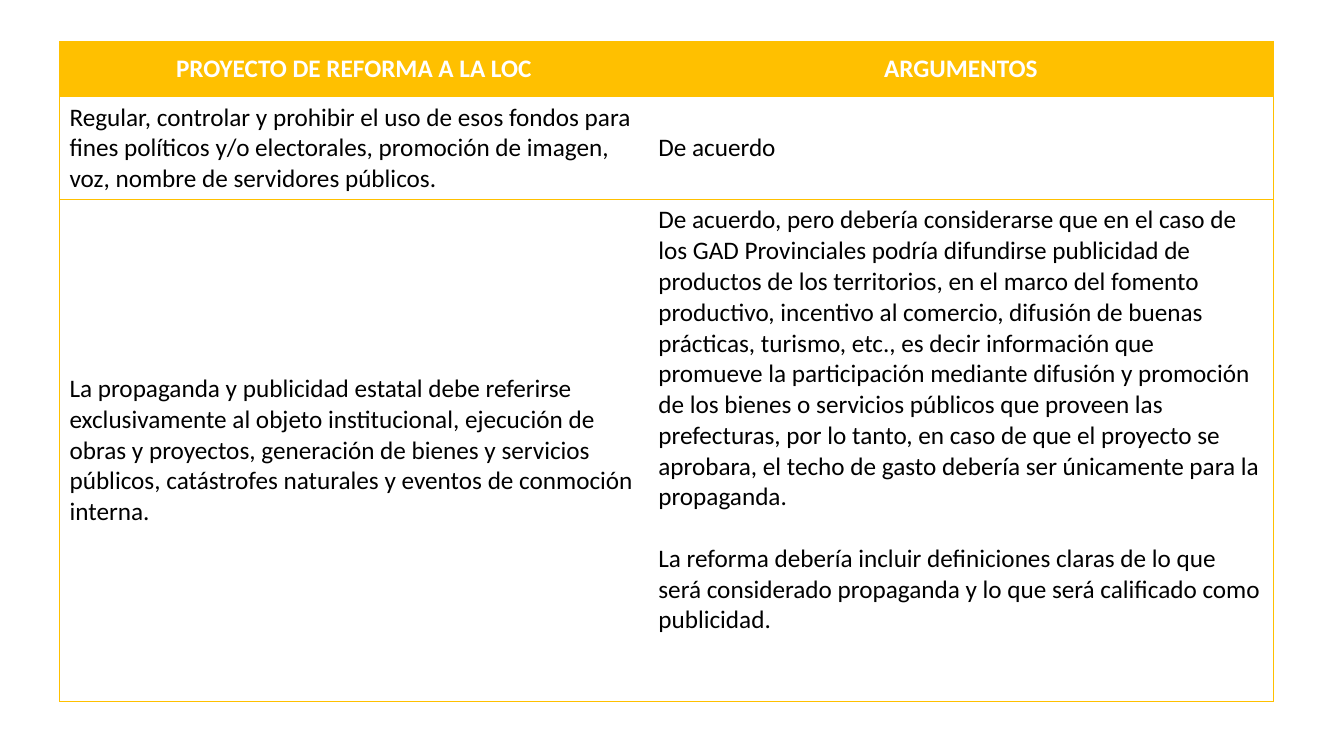
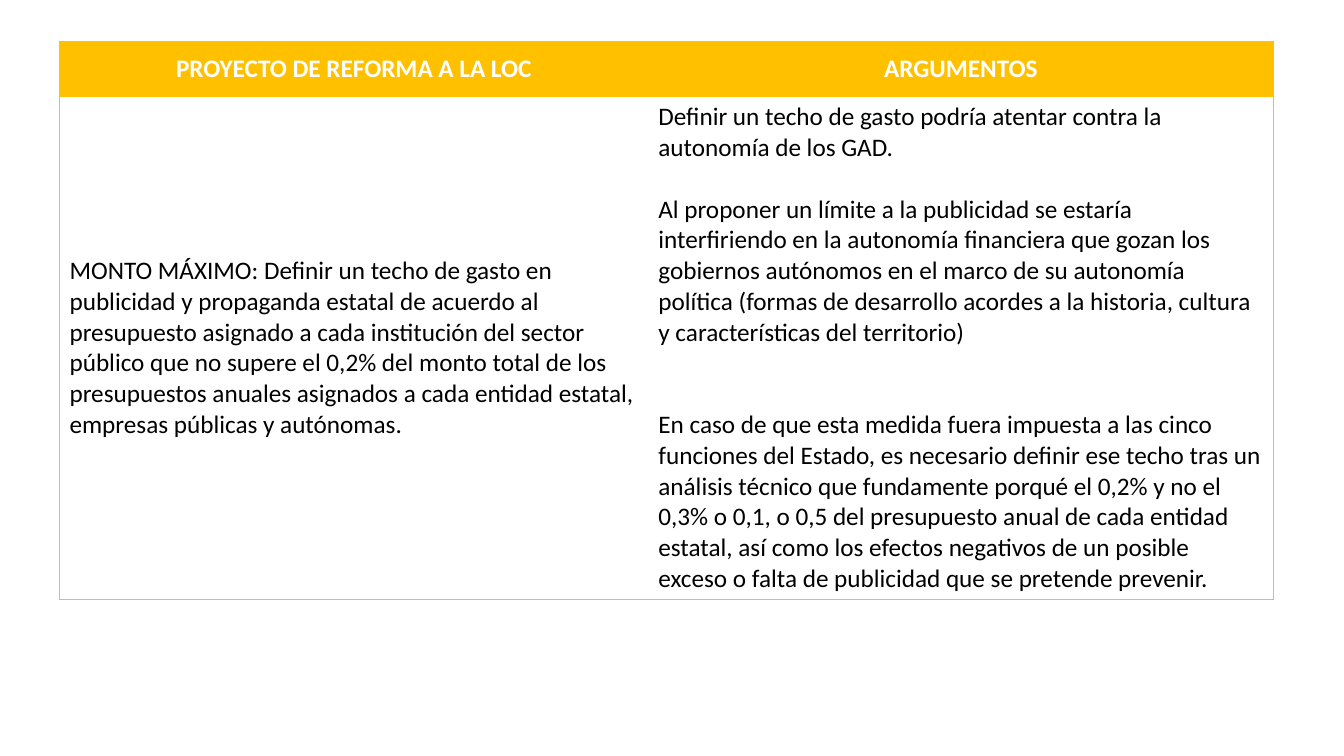
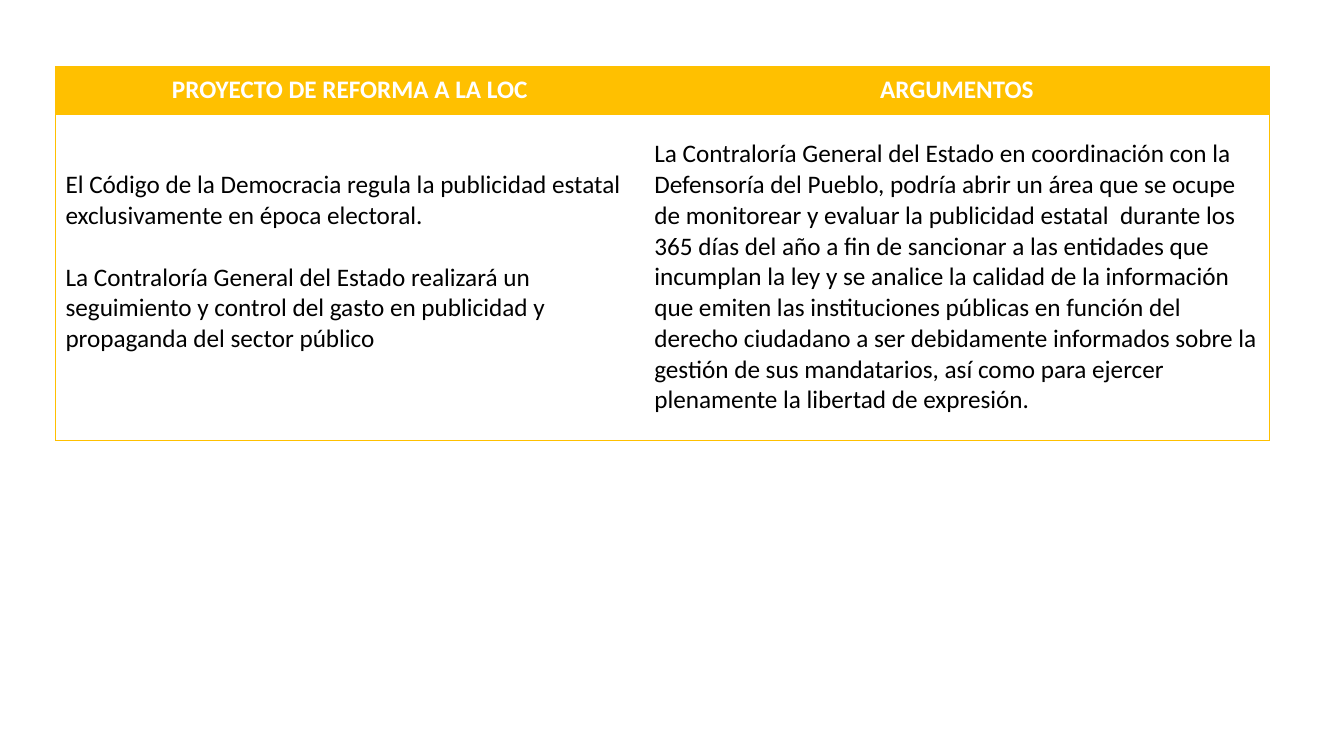
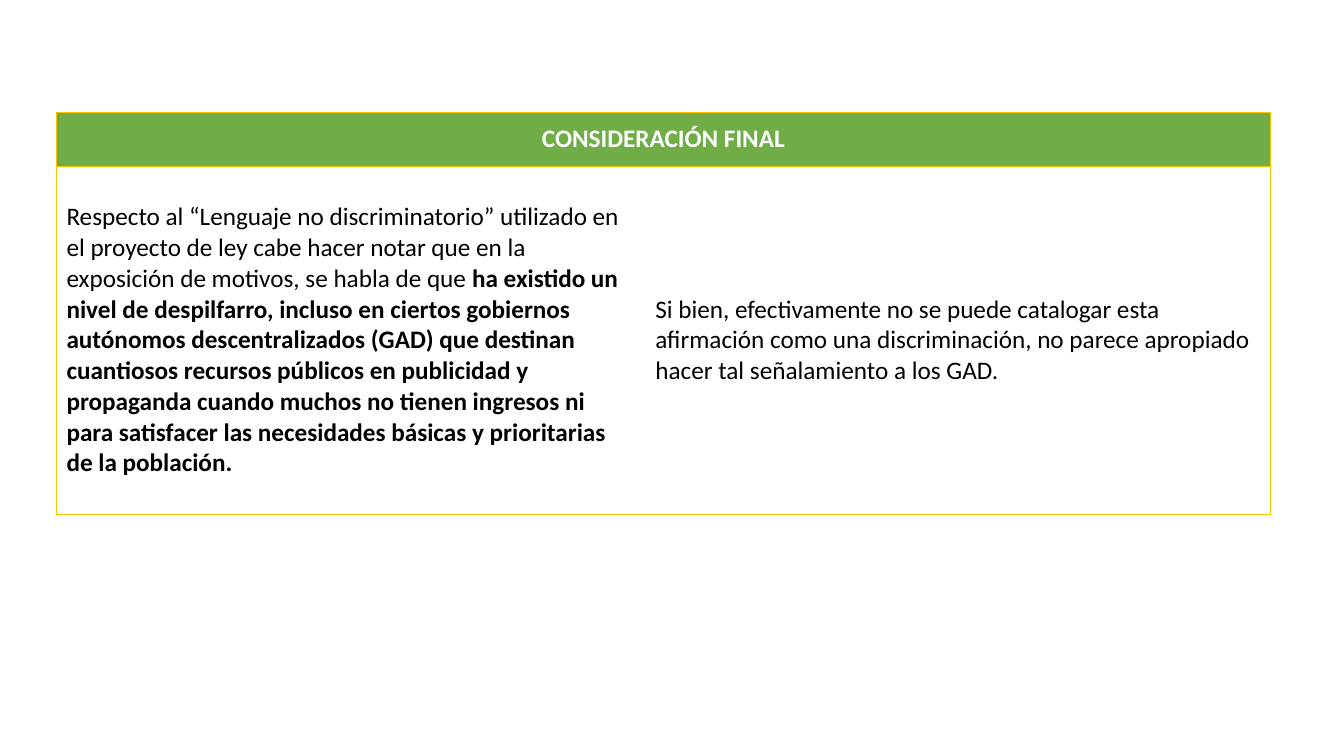
from dataclasses import dataclass

from lxml import etree
from pptx import Presentation
from pptx.dml.color import RGBColor
from pptx.enum.text import MSO_ANCHOR, PP_ALIGN
from pptx.oxml.ns import qn
from pptx.util import Inches, Pt

GOLD = RGBColor(0xFF, 0xC0, 0x00)
GREEN = RGBColor(0x70, 0xAD, 0x47)
WHITE = RGBColor(0xFF, 0xFF, 0xFF)
BLACK = RGBColor(0x00, 0x00, 0x00)
MIDDLE = MSO_ANCHOR.MIDDLE
LEFT, CENTER = PP_ALIGN.LEFT, PP_ALIGN.CENTER

FONT = "Calibri"
SIZE = Pt(18)
LINE = 22
BORDER = Pt(0.5)
COLS = (5.84, 6.2)
MARGIN = 0.05
NO_STYLE = "{2D5ABB26-0587-4C30-8999-92F81FD0307C}"
HEADERS = ("PROYECTO DE REFORMA A LA LOC", "ARGUMENTOS")


@dataclass
class Para:
    """Paragraph with an optional bold ending and a gap above, in lines."""
    text: str
    bold: str = ""
    gap: int = 0


@dataclass
class Body:
    """Body cell: its paragraphs and its bottom margin in inches."""
    paras: list
    bottom: float = MARGIN


def set_borders(cell, sides):
    """Draw gold lines on the given sides of a cell."""
    tc_pr = cell._tc.get_or_add_tcPr()
    for i, side in enumerate(sides):
        ln = etree.Element(qn(f"a:ln{side}"), w=str(BORDER))
        fill = etree.SubElement(ln, qn("a:solidFill"))
        etree.SubElement(fill, qn("a:srgbClr"), val=str(GOLD))
        tc_pr.insert(i, ln)


def write_cell(cell, body, color=BLACK, bold=False, align=LEFT):
    """Write the paragraphs of a cell, centred vertically."""
    cell.vertical_anchor = MIDDLE
    cell.margin_bottom = Inches(body.bottom)
    tf = cell.text_frame
    for i, para in enumerate(body.paras):
        p = tf.add_paragraph() if i else tf.paragraphs[0]
        p.alignment = align
        p.space_before = Pt(LINE * para.gap)
        p.font.name, p.font.size = FONT, SIZE
        p.font.color.rgb = color
        p.font.bold = bold
        p.add_run().text = para.text
        if para.bold:
            r = p.add_run()
            r.text = para.bold
            r.font.bold = True


def add_comparison(prs, left, top, heights, rows, headers=HEADERS, fill=GOLD):
    """Add a slide with a two-column table under a coloured header."""
    slide = prs.slides.add_slide(prs.slide_layouts[6])
    frame = slide.shapes.add_table(
        len(heights), len(COLS), Inches(left), Inches(top),
        Inches(sum(COLS)), Inches(sum(heights)))
    table = frame.table
    table.horz_banding = False
    table._tbl.tblPr.find(qn("a:tableStyleId")).text = NO_STYLE
    for col, width in zip(table.columns, COLS):
        col.width = Inches(width)
    for row, height in zip(table.rows, heights):
        row.height = Inches(height)
    if len(headers) == 1:
        table.cell(0, 0).merge(table.cell(0, 1))
    for i, text in enumerate(headers):
        write_cell(table.cell(0, i), Body([Para(text)]), WHITE, True, CENTER)
    for i, row in enumerate(rows, 1):
        for j, body in enumerate(row):
            write_cell(table.cell(i, j), body)
    for i in range(len(heights)):
        for j, side in enumerate("LR"):
            cell = table.cell(i, j)
            if i:
                cell.fill.background()
            else:
                cell.fill.solid()
                cell.fill.fore_color.rgb = fill
            merged = cell.is_merge_origin
            set_borders(cell, "LRTB" if merged else side + "TB")


def main():
    """Build the four slides."""
    prs = Presentation()
    prs.slide_width, prs.slide_height = Inches(13.33), Inches(7.5)

    add_comparison(prs, 0.59, 0.41, (0.55, 1.02, 4.98), [
        (Body([Para("Regular, controlar y prohibir el uso de esos fondos para fines "
                    "políticos y/o electorales, promoción de imagen, voz, nombre de "
                    "servidores públicos.")]),
         Body([Para("De acuerdo")])),
        (Body([Para("La propaganda y publicidad estatal debe referirse exclusivamente al "
                    "objeto institucional, ejecución de obras y proyectos, generación de "
                    "bienes y servicios públicos, catástrofes naturales y eventos de "
                    "conmoción interna.")]),
         Body([Para("De acuerdo, pero debería considerarse que en el caso de los GAD "
                    "Provinciales podría difundirse publicidad de productos de los "
                    "territorios, en el marco del fomento productivo, incentivo al "
                    "comercio, difusión de buenas prácticas, turismo, etc., es decir "
                    "información que  promueve la participación mediante difusión y "
                    "promoción de los bienes o servicios públicos que proveen las "
                    "prefecturas, por lo tanto, en caso de que el proyecto se aprobara, "
                    "el techo de gasto debería ser únicamente para la propaganda."),
               Para("La reforma debería incluir definiciones claras de lo que será "
                    "considerado propaganda y lo que será calificado como publicidad.",
                    gap=1)], bottom=0.65)),
    ])

    add_comparison(prs, 0.59, 0.41, (0.55, 4.98), [
        (Body([Para("MONTO MÁXIMO: Definir un techo de gasto en publicidad y propaganda "
                    "estatal de acuerdo al presupuesto asignado a cada institución del "
                    "sector público que no supere el 0,2% del monto total de los "
                    "presupuestos anuales asignados a cada entidad estatal, empresas "
                    "públicas y autónomas.")]),
         Body([Para("Definir un techo de gasto podría atentar contra la autonomía de los "
                    "GAD."),
               Para("Al proponer un límite a la publicidad se estaría interfiriendo en la "
                    "autonomía financiera que gozan los gobiernos autónomos en el marco "
                    "de su autonomía política (formas de desarrollo acordes a la "
                    "historia, cultura y características del territorio)", gap=1),
               Para("En caso de que esta medida fuera impuesta a las cinco funciones del "
                    "Estado, es necesario definir ese techo tras un análisis técnico que "
                    "fundamente porqué el 0,2% y no el 0,3% o 0,1, o 0,5 del presupuesto "
                    "anual de cada entidad estatal, así como los efectos negativos de un "
                    "posible exceso o falta de publicidad que se pretende prevenir.",
                    gap=2)])),
    ])

    add_comparison(prs, 0.55, 0.66, (0.47, 3.24), [
        (Body([Para("El Código de la Democracia regula la publicidad estatal "
                    "exclusivamente en época electoral."),
               Para("La Contraloría General del Estado realizará un seguimiento y control "
                    "del gasto en publicidad y propaganda del sector público", gap=1)],
              bottom=0.35),
         Body([Para("La Contraloría General del Estado en coordinación con la Defensoría "
                    "del Pueblo, podría abrir un área que se ocupe de monitorear y "
                    "evaluar la publicidad estatal  durante los 365 días del año a fin de "
                    "sancionar a las entidades que incumplan la ley y se analice la "
                    "calidad de la información que emiten las instituciones públicas en "
                    "función del  derecho ciudadano a ser debidamente informados sobre la "
                    "gestión de sus mandatarios, así como para ejercer plenamente la "
                    "libertad de expresión.")])),
    ])

    add_comparison(prs, 0.56, 1.11, (0.54, 3.45), [
        (Body([Para("Respecto al “Lenguaje no discriminatorio” utilizado en el proyecto "
                    "de ley cabe hacer notar que en la exposición de motivos, se habla de "
                    "que ",
                    bold="ha existido un nivel de despilfarro, incluso en ciertos "
                    "gobiernos autónomos descentralizados (GAD) que destinan cuantiosos "
                    "recursos públicos en publicidad y propaganda cuando muchos no tienen "
                    "ingresos ni para satisfacer las necesidades básicas y prioritarias "
                    "de la población.")]),
         Body([Para("Si bien, efectivamente no se puede catalogar esta afirmación como "
                    "una discriminación, no parece apropiado hacer tal señalamiento a los "
                    "GAD.")])),
    ], headers=("CONSIDERACIÓN FINAL",), fill=GREEN)

    prs.save("out.pptx")


if __name__ == "__main__":
    main()
